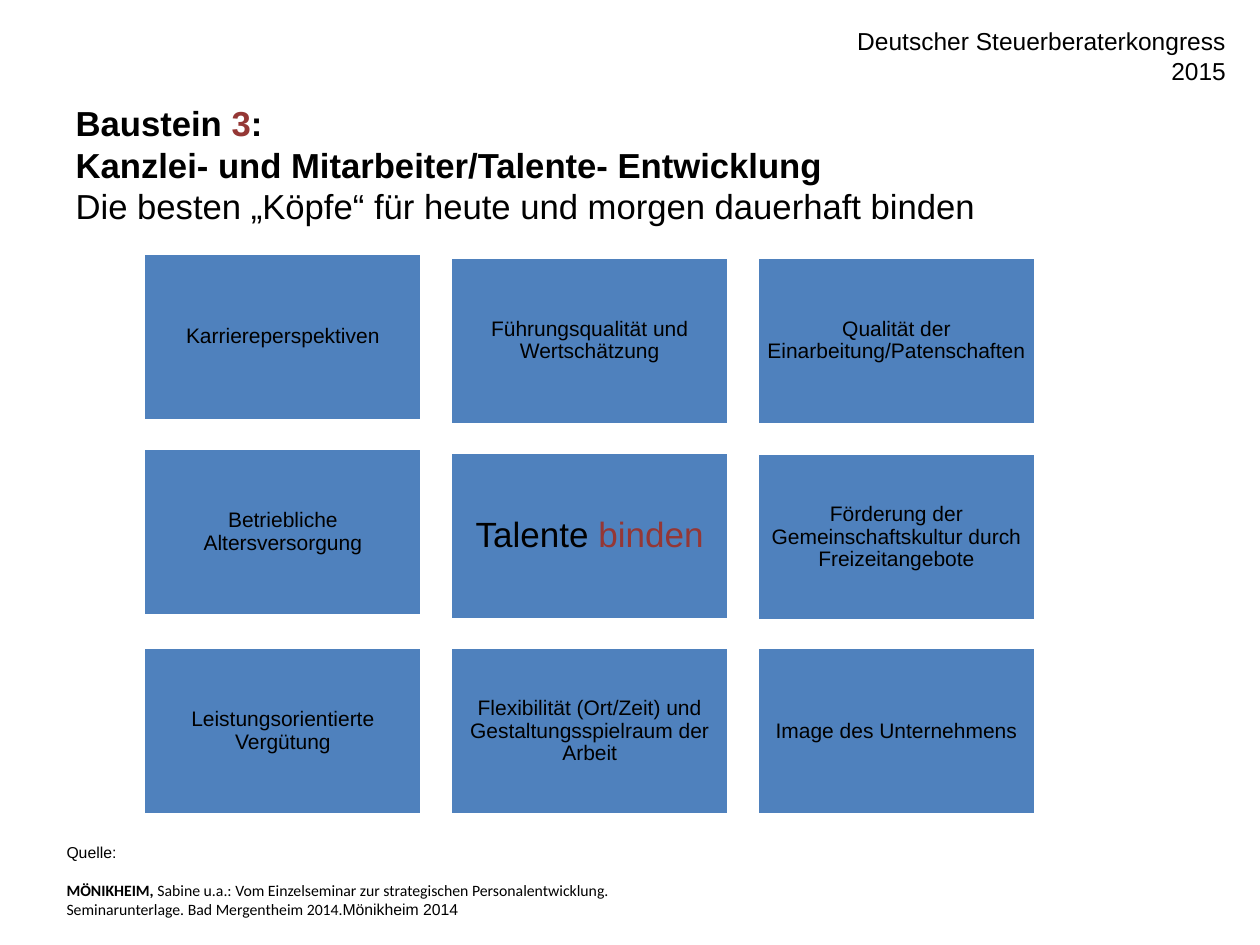
"""Build the slide on binding talent with nine tiles."""
from dataclasses import dataclass
from pptx import Presentation
from pptx.dml.color import RGBColor
from pptx.enum.shapes import MSO_SHAPE
from pptx.enum.text import MSO_ANCHOR, MSO_AUTO_SIZE, PP_ALIGN
from pptx.slide import Slide
from pptx.text.text import TextFrame, _Paragraph
from pptx.util import Inches, Pt

RECT = MSO_SHAPE.RECTANGLE
TOP, MIDDLE = MSO_ANCHOR.TOP, MSO_ANCHOR.MIDDLE
LEFT, CENTER, RIGHT = PP_ALIGN.LEFT, PP_ALIGN.CENTER, PP_ALIGN.RIGHT


@dataclass(frozen=True)
class Theme:
    """Colours, fonts and type sizes."""
    ink: str = "000000"
    red: str = "953735"
    blue: str = "4F81BD"
    white: str = "FFFFFF"
    font: str = "Arial"
    serial: str = "Calibri"
    title: float = 19.8
    core: float = 20
    head: float = 14
    tile: float = 12
    note: float = 9


@dataclass(frozen=True)
class Tile:
    """One tile: its column, top edge and text, with an accent if any."""
    col: int
    top: float
    text: str
    accent: str = ""


THEME = Theme()
EDGE, STEP, WIDTH, HEIGHT = 1.14, 2.435, 2.21, 1.33
TILES = [
    Tile(0, 2.01, "Karriereperspektiven"),
    Tile(1, 2.04, "Führungsqualität und Wertschätzung"),
    Tile(2, 2.04, "Qualität der Einarbeitung/Patenschaften"),
    Tile(0, 3.56, "Betriebliche Altersversorgung"),
    Tile(1, 3.59, "Talente ", "binden"),
    Tile(2, 3.6, "Förderung der Gemeinschaftskultur durch Freizeitangebote"),
    Tile(0, 5.14, "Leistungsorientierte Vergütung"),
    Tile(1, 5.14, "Flexibilität (Ort/Zeit) und Gestaltungsspielraum der Arbeit"),
    Tile(2, 5.14, "Image des Unternehmens"),
]


def write(para: _Paragraph, text: str, *, size: float, color: str = THEME.ink,
          bold: bool = False, font: str = THEME.font) -> None:
    """Add text to a paragraph, with a line break at each newline."""
    for index, line in enumerate(text.split("\n")):
        if index:
            para.add_line_break()
        if line:
            run = para.add_run()
            run.text = line
            run.font.size, run.font.bold, run.font.name = Pt(size), bold, font
            run.font.color.rgb = RGBColor.from_string(color)


def set_frame(frame: TextFrame, align: PP_ALIGN, anchor: MSO_ANCHOR = TOP,
              inset: tuple[float, float] = (0.1, 0.05)) -> _Paragraph:
    """Format a text frame and return its first paragraph."""
    frame.word_wrap, frame.auto_size = True, MSO_AUTO_SIZE.NONE
    frame.vertical_anchor = anchor
    frame.margin_left = frame.margin_right = Inches(inset[0])
    frame.margin_top = frame.margin_bottom = Inches(inset[1])
    para = frame.paragraphs[0]
    para.alignment = align
    return para


def add_head(slide: Slide) -> None:
    """Add the congress name at the top right."""
    box = slide.shapes.add_textbox(Inches(5.79), Inches(0.21), Inches(3.94), Inches(0.47))
    para = set_frame(box.text_frame, RIGHT, inset=(0, 0))
    write(para, "Deutscher Steuerberaterkongress\n2015", size=THEME.head)


def add_title(slide: Slide) -> None:
    """Fill the title placeholder."""
    title = slide.shapes.title
    title.left, title.top = Inches(0.5), Inches(0.76)
    title.width, title.height = Inches(9), Inches(1.25)
    para = set_frame(title.text_frame, LEFT)
    size = THEME.title
    write(para, "Baustein ", size=size, bold=True)
    write(para, "3", size=size, color=THEME.red, bold=True)
    write(para, ":\nKanzlei- und Mitarbeiter/Talente- Entwicklung\n", size=size, bold=True)
    write(para, "Die besten „Köpfe“ für heute und morgen dauerhaft binden", size=size)


def add_tile(slide: Slide, tile: Tile) -> None:
    """Draw one tile with its text."""
    shape = slide.shapes.add_shape(RECT, Inches(EDGE + tile.col * STEP), Inches(tile.top),
                                   Inches(WIDTH), Inches(HEIGHT))
    shape.shadow.inherit = False
    shape.fill.solid()
    shape.fill.fore_color.rgb = RGBColor.from_string(THEME.blue)
    shape.line.color.rgb = RGBColor.from_string(THEME.white)
    shape.line.width = Pt(2)
    para = set_frame(shape.text_frame, CENTER, MIDDLE, (0.05, 0.05))
    para.line_spacing = 0.9
    size = THEME.core if tile.accent else THEME.tile
    write(para, tile.text, size=size)
    write(para, tile.accent, size=size, color=THEME.red)


def add_source(slide: Slide) -> None:
    """Add the source note at the bottom left."""
    box = slide.shapes.add_textbox(Inches(0.43), Inches(6.64), Inches(4.57), Inches(0.81))
    size = THEME.note
    write(set_frame(box.text_frame, LEFT), "Quelle:", size=size)
    para = box.text_frame.add_paragraph()
    para.space_before = Pt(11)
    write(para, "MÖNIKHEIM, ", size=size, bold=True, font=THEME.serial)
    write(para, "Sabine u.a.: Vom Einzelseminar zur strategischen Personalentwicklung. "
          "Seminarunterlage. Bad Mergentheim 2014.", size=size, font=THEME.serial)
    write(para, "Mönikheim 2014", size=size)


def main() -> None:
    """Build and save the deck."""
    deck = Presentation()
    deck.slide_width, deck.slide_height = Inches(10), Inches(7.5)
    slide = deck.slides.add_slide(deck.slide_layouts.get_by_name("Title Only"))
    add_head(slide)
    for tile in TILES:
        add_tile(slide, tile)
    add_source(slide)
    add_title(slide)
    deck.save("out.pptx")


if __name__ == "__main__":
    main()
